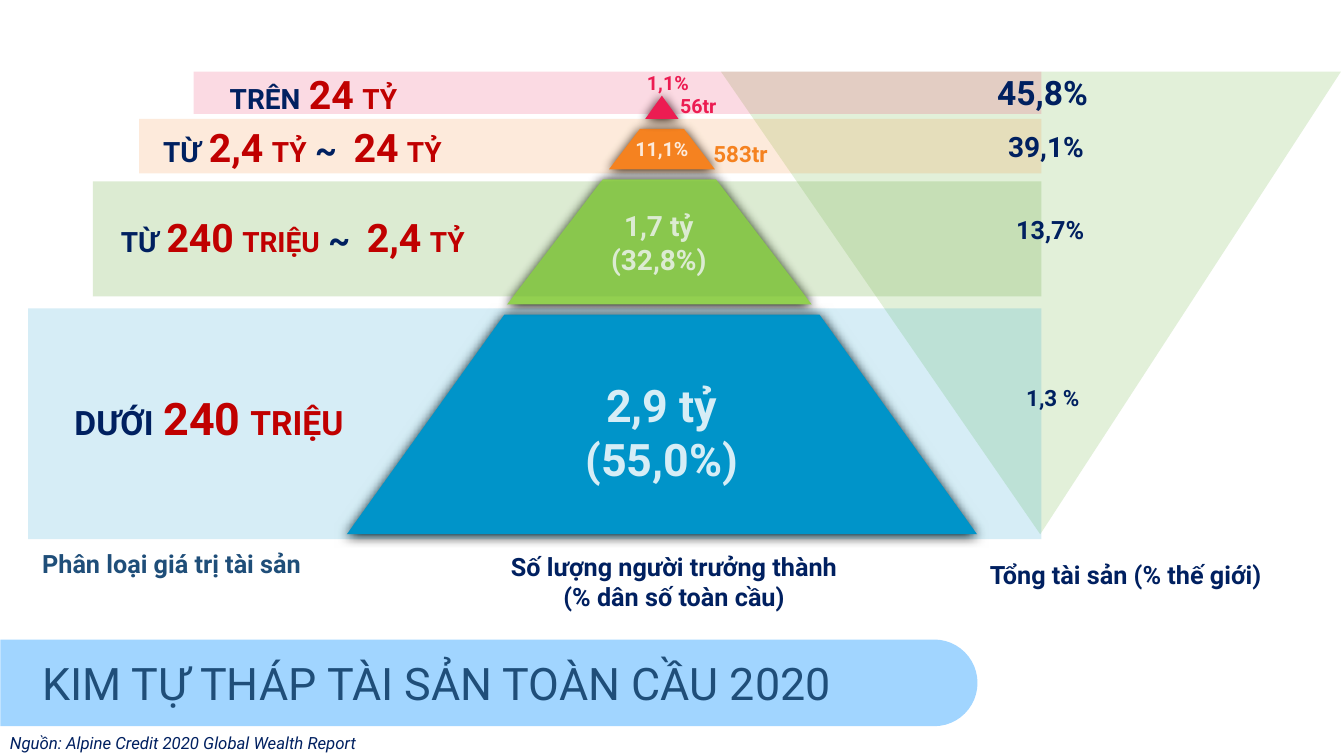
from dataclasses import dataclass

from lxml import etree
from pptx import Presentation, util as u
from pptx.dml.color import RGBColor
from pptx.enum import shapes, text
from pptx.oxml import ns

PX = 9144  # EMU in one px, 100 px to the inch
KIND = shapes.MSO_SHAPE


@dataclass(frozen=True)
class Theme:
    font: str = "Roboto"
    navy: str = "002060"
    steel: str = "1F4E79"
    red: str = "C00000"
    white: str = "FFFFFF"
    sky: str = "A1D5FF"
    blue: str = "0094C9"
    lime: str = "92D050"
    green: str = "70AD47"
    pale: str = "E2F0D9"
    orange: str = "F58220"
    pink: str = "EC1C52"
    title: int = 32
    large: int = 24
    mid: int = 20
    label: int = 18
    small: int = 16
    tiny: int = 14
    note: int = 12
    figure: int = 28


def style(para, words, *, font, size, color, bold=True, italic=False):
    """Add one formatted run to a paragraph."""
    run = para.add_run()
    run.text = words
    run.font.name = font
    run.font.size = u.Pt(size)
    run.font.bold = bold
    run.font.italic = italic
    run.font.color.rgb = RGBColor.from_string(color)


def add(parent, tag, **attrs):
    """Append a drawing element to its XML parent."""
    return etree.SubElement(parent, ns.qn(tag), attrs)


class Deck:
    def __init__(self, theme):
        self.theme = theme
        self.file = Presentation()
        self.file.slide_width = 1333 * PX
        self.file.slide_height = 750 * PX
        self.slide = self.file.slides.add_slide(self.file.slide_layouts[5])

    def shape(self, kind, box, color, adj=None, turn=0, alpha=None, glow=False):
        """Draw a preset shape; alpha is opacity in percent, glow a dark edge."""
        item = self.slide.shapes.add_shape(kind, *(n * PX for n in box))
        item.shadow.inherit = False
        item.fill.solid()
        item.fill.fore_color.rgb = RGBColor.from_string(color)
        item.line.fill.background()
        item.rotation = turn
        if adj is not None:
            item.adjustments[0] = adj
        if alpha:
            tint = item.element.spPr.find(".//" + ns.qn("a:srgbClr"))
            add(tint, "a:alpha", val=str(alpha * 1000))
        if glow:
            effect = item.element.spPr.find(ns.qn("a:effectLst"))
            shade = add(effect, "a:outerShdw", blurRad="107950", dist="12700",
                        dir="5400000", algn="t", rotWithShape="0")
            add(shade, "a:srgbClr", val="000000")

    def title(self, box, words):
        item = self.slide.shapes.title
        item.left, item.top, item.width, item.height = (n * PX for n in box)
        frame = item.text_frame
        frame.auto_size = text.MSO_AUTO_SIZE.NONE
        frame.vertical_anchor = text.MSO_ANCHOR.TOP
        para = frame.paragraphs[0]
        para.alignment = text.PP_ALIGN.LEFT
        style(para, words, font=self.theme.font, size=self.theme.title,
              color=self.theme.steel, bold=False)
        item.element.getparent().append(item.element)  # in front of the banner

    def frame(self, box):
        item = self.slide.shapes.add_textbox(*(n * PX for n in box))
        item.text_frame.word_wrap = True
        return item.text_frame

    def text(self, box, words, size, color, mid=False, **form):
        """Write a text box, one paragraph for each line of words."""
        frame = self.frame(box)
        for i, line in enumerate(words.split("\n")):
            para = frame.add_paragraph() if i else frame.paragraphs[0]
            para.alignment = text.PP_ALIGN.CENTER if mid else text.PP_ALIGN.LEFT
            style(para, line, font=self.theme.font, size=size, color=color, **form)

    def range(self, box, words, low, high):
        """Write a wealth range: red amounts, large digits, navy link words."""
        look = self.theme
        gap = (low + high) // 2
        para = self.frame(box).paragraphs[0]
        for i, word in enumerate(words.split(" ")):
            if i:
                style(para, " ", font=look.font, size=gap, color=look.red)
            if word:
                link = i == 0 or word == "~"
                size = high if word[0].isdigit() else gap if word == "~" else low
                style(para, word, font=look.font, size=size,
                      color=look.navy if link else look.red)


def main():
    t = Theme()
    deck = Deck(t)

    deck.shape(KIND.ROUND_2_SAME_RECTANGLE, (442, 193, 86, 969), t.sky, adj=0.5, turn=90)
    deck.title((32, 646, 927, 64), "KIM TỰ THÁP TÀI SẢN TOÀN CẦU 2020")
    deck.text((0, 722, 548, 30), "Nguồn: Alpine Credit 2020 Global Wealth Report",
              t.note, t.navy, bold=False, italic=True)

    # Pyramid of adults
    for kind, box, color, adj in (
        (KIND.TRAPEZOID, (344, 312, 625, 218), t.blue, 0.717),
        (KIND.TRAPEZOID, (503, 178, 302, 124), t.lime, 0.765),
        (KIND.TRAPEZOID, (604, 128, 105, 40), t.orange, 0.765),
        (KIND.ISOSCELES_TRIANGLE, (640, 95, 33, 23), t.pink, 0.5),
    ):
        deck.shape(kind, box, color, adj=adj, glow=True)
    for box, words, size, color in (
        ((490, 370, 333, 118), "2,9 tỷ\n(55,0%)", t.title, t.white),
        ((487, 202, 333, 77), "1,7 tỷ\n(32,8%)", t.mid, t.white),
        ((490, 131, 333, 34), "11,1%", t.tiny, t.white),
        ((496, 65, 333, 34), "1,1%", t.tiny, t.pink),
        ((350, 542, 637, 71), "Số lượng người trưởng thành\n(% dân số toàn cầu)",
         t.label, t.navy),
    ):
        deck.text(box, words, size, color, mid=True)

    # Inverted triangle of assets
    deck.shape(KIND.ISOSCELES_TRIANGLE, (715, 71, 615, 459), t.pale, adj=0.485, turn=180)
    deck.text((663, 88, 59, 34), "56tr", t.tiny, t.pink, mid=True)
    deck.text((693, 134, 83, 37), "583tr", t.small, t.orange, mid=True)

    # Bands, all ending at the same right edge
    edge = 1033
    for left, top, high, color, alpha in (
        (28, 306, 229, t.blue, 16),
        (92, 180, 114, t.green, 24),
        (138, 118, 54, t.orange, 16),
        (192, 71, 42, t.pink, 16),
    ):
        deck.shape(KIND.RECTANGLE, (left, top, edge - left, high), color, alpha=alpha)

    for box, words, low, high in (
        ((218, 65, 245, 57), "TRÊN 24 TỶ", t.mid, t.figure),
        ((152, 117, 396, 57), "TỪ 2,4 TỶ ~  24 TỶ", t.mid, t.figure),
        ((110, 207, 396, 57), "TỪ 240 TRIỆU ~  2,4 TỶ", t.mid, t.figure),
        ((64, 383, 388, 64), "DƯỚI 240 TRIỆU", t.large, t.title),
    ):
        deck.range(box, words, low, high)

    for box, words, size, color in (
        ((979, 66, 148, 50), "45,8%", t.large, t.navy),
        ((990, 124, 122, 44), "39,1%", t.mid, t.navy),
        ((998, 208, 94, 40), "13,7%", t.label, t.navy),
        ((1008, 376, 94, 37), "1,3 %", t.small, t.navy),
        ((972, 550, 333, 40), "Tổng tài sản (% thế giới)", t.label, t.navy),
        ((32, 539, 333, 40), "Phân loại giá trị tài sản", t.label, t.steel),
    ):
        deck.text(box, words, size, color)

    deck.file.save("out.pptx")


if __name__ == "__main__":
    main()
